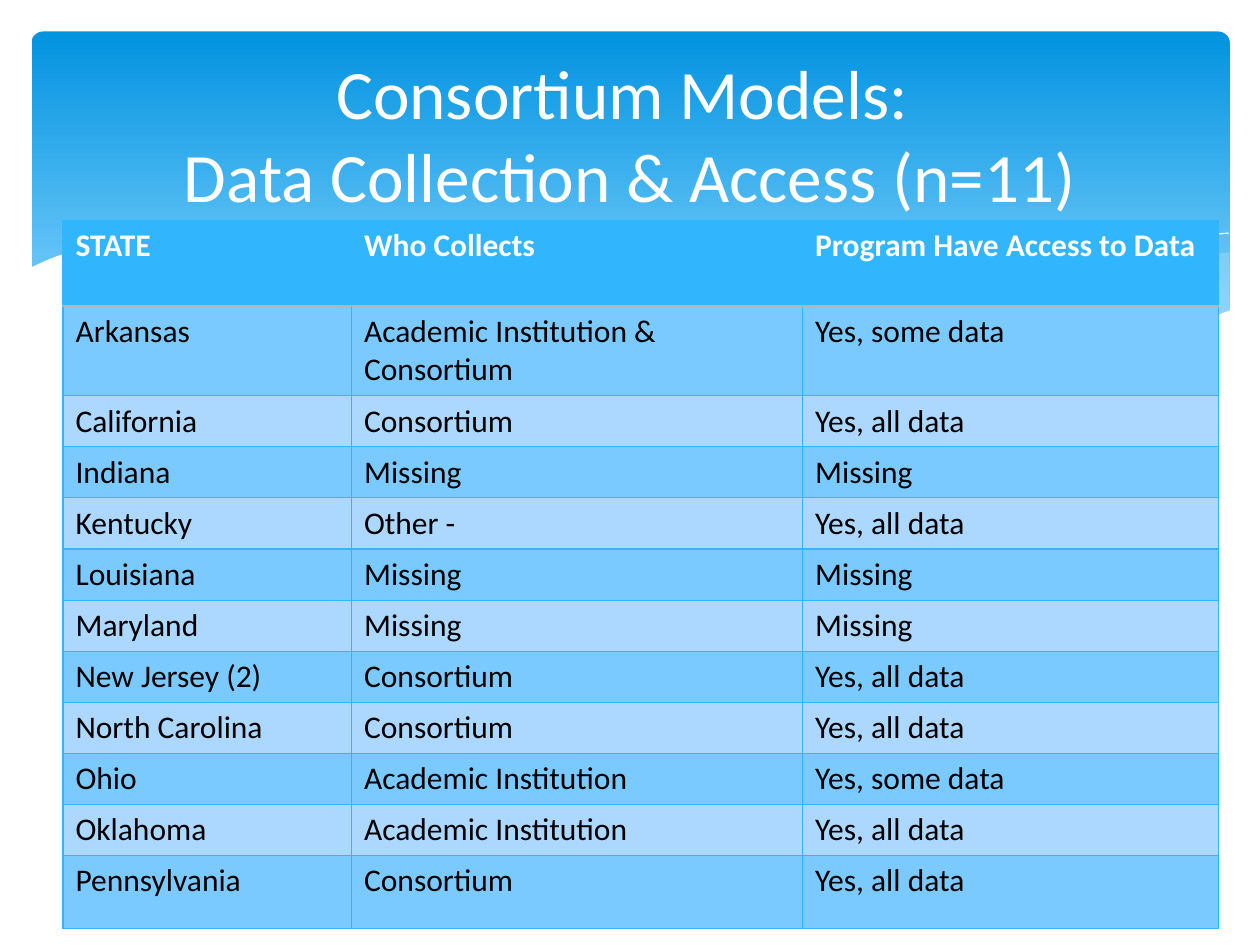
from dataclasses import dataclass
from lxml.etree import SubElement
from pptx import Presentation
from pptx.dml.color import RGBColor as Color
from pptx.enum.shapes import MSO_SHAPE as Preset
from pptx.enum.text import MSO_ANCHOR as Anchor, PP_ALIGN as Align
from pptx.oxml.ns import qn
from pptx.util import Inches, Pt


@dataclass(frozen=True)
class Theme:
    font: str = "Calibri"
    title_size: float = 39.6
    table_size: float = 18
    white: str = "FFFFFF"
    black: str = "000000"
    banner_top: str = "0293E0"
    banner_bottom: str = "83D3FE"
    wave: str = "C6E7FC"
    accent: str = "31B6FD"
    header_rule: str = "B4B4B4"
    bands: tuple = ("7ACAFF", "ACD7FF")


RIGHT_WAVE = [
    (9.76, 2), (9.48, 2.04), (9.21, 2.1), (8.91, 2.16), (8.61, 2.23), (8.05, 2.37),
    (7.53, 2.48), (7.06, 2.57), (6.61, 2.65), (6.91, 2.69), (7.19, 2.72), (7.45, 2.75),
    (7.81, 2.77), (8.14, 2.78), (8.54, 2.76), (8.81, 2.73), (9.05, 2.69), (9.28, 2.63),
    (9.49, 2.57), (9.76, 2.47),
]
MIDDLE_WAVE = [
    (8.93, 2.73), (8.66, 2.69), (8.07, 2.6), (7.41, 2.47), (6.68, 2.31), (6.29, 2.22),
    (5.84, 2.11), (5.41, 2.03), (5.02, 1.96), (4.65, 1.91), (4.2, 1.87), (3.8, 1.85),
    (3.44, 1.86), (3.13, 1.88), (2.86, 1.91), (3.23, 1.96), (3.62, 2.03), (4.04, 2.11),
    (4.49, 2.22), (5.3, 2.4), (6.01, 2.55), (6.5, 2.64), (6.95, 2.7), (7.36, 2.75),
    (7.73, 2.77), (8.07, 2.78), (8.38, 2.78), (8.67, 2.76),
]
LONG_CURVE = [
    (3.09, 1.95), (3.28, 1.92), (3.53, 1.89), (3.87, 1.87), (4.16, 1.87), (4.5, 1.88),
    (4.89, 1.9), (5.33, 1.94), (5.82, 2), (6.36, 2.08), (6.95, 2.19), (7.6, 2.33),
    (8.31, 2.51), (9.07, 2.72),
]
SHORT_CURVE = [
    (6.13, 2.57), (6.53, 2.46), (6.95, 2.35), (7.48, 2.23), (8.06, 2.1), (8.66, 1.99),
    (8.95, 1.94), (9.24, 1.9), (9.51, 1.87), (9.75, 1.85),
]
WHITE_WAVE = [
    (9.77, 2.46), (9.5, 2.56), (9.2, 2.65), (8.87, 2.71), (8.5, 2.75), (8.09, 2.77),
    (7.61, 2.75), (7.08, 2.7), (6.48, 2.62), (5.79, 2.5), (5.03, 2.33), (4.47, 2.2),
    (3.91, 2.07), (3.4, 1.97), (2.92, 1.9), (2.5, 1.86), (2.11, 1.84), (1.77, 1.84),
    (1.46, 1.85), (1.19, 1.87), (0.95, 1.91), (0.76, 1.95), (0.59, 1.99), (0.46, 2.03),
    (0.36, 2.07), (0.23, 2.13), (0.23, 3.29), (9.77, 3.29),
]
COLUMN_WIDTHS = [2.29, 3.58, 3.3]
ROW_HEIGHTS = [0.68, 0.68] + [0.39] * 9 + [0.58]
ROWS = [
    ("STATE", "Who Collects", "Program Have Access to Data"),
    ("Arkansas", "Academic Institution & Consortium", "Yes, some data"),
    ("California", "Consortium", "Yes, all data"),
    ("Indiana", "Missing", "Missing"),
    ("Kentucky", "Other -", "Yes, all data"),
    ("Louisiana", "Missing", "Missing"),
    ("Maryland", "Missing", "Missing"),
    ("New Jersey (2)", "Consortium", "Yes, all data"),
    ("North Carolina", "Consortium", "Yes, all data"),
    ("Ohio", "Academic Institution", "Yes, some data"),
    ("Oklahoma", "Academic Institution", "Yes, all data"),
    ("Pennsylvania", "Consortium", "Yes, all data"),
]


class SlideBuilder:
    def __init__(self, slide, theme):
        self.slide = slide
        self.theme = theme

    def banner(self, left, top, width, height):
        shape = self.slide.shapes.add_shape(
            Preset.ROUNDED_RECTANGLE, Inches(left), Inches(top), Inches(width), Inches(height))
        shape.adjustments[0] = 0.034
        shape.shadow.inherit = False
        shape.line.fill.background()
        shape.fill.gradient()
        shape.fill.gradient_angle = 270
        colors = (self.theme.banner_top, self.theme.banner_bottom)
        for stop, color, position in zip(shape.fill.gradient_stops, colors, (0, 0.9)):
            stop.color.rgb = Color.from_string(color)
            stop.position = position

    def outline(self, points, closed):
        start, *rest = [(Inches(x), Inches(y)) for x, y in points]
        builder = self.slide.shapes.build_freeform(*start)
        builder.add_line_segments(rest, close=closed)
        shape = builder.convert_to_shape()
        shape.shadow.inherit = False
        return shape

    def wave(self, points, color, opacity=100):
        shape = self.outline(points, True)
        shape.line.fill.background()
        shape.fill.solid()
        shape.fill.fore_color.rgb = Color.from_string(color)
        if opacity < 100:
            color_element = shape.fill._xPr.find(qn("a:solidFill"))[0]
            SubElement(color_element, qn("a:alpha"), val=str(opacity * 1000))

    def curve(self, points):
        shape = self.outline(points, False)
        shape.fill.background()
        shape.line.color.rgb = Color.from_string(self.theme.white)
        shape.line.width = Pt(0)

    def run(self, paragraph, text, size, color, bold=False):
        run = paragraph.add_run()
        run.text = text
        run.font.name = self.theme.font
        run.font.size = Pt(size)
        run.font.bold = bold
        run.font.color.rgb = Color.from_string(color)

    def title(self, lines, left, top, width, height):
        box = self.slide.shapes.add_textbox(
            Inches(left), Inches(top), Inches(width), Inches(height))
        frame = box.text_frame
        frame.word_wrap = True
        frame.vertical_anchor = Anchor.MIDDLE
        paragraph = frame.paragraphs[0]
        paragraph.alignment = Align.CENTER
        for index, line in enumerate(lines):
            if index:
                paragraph.add_line_break()
            self.run(paragraph, line, self.theme.title_size, self.theme.white)

    def borders(self, cell, rules):
        properties = cell._tc.get_or_add_tcPr()
        for side, (color, width) in rules.items():
            line = SubElement(properties, qn(f"a:ln{side}"), w=str(Pt(width)))
            fill = SubElement(line, qn("a:solidFill"))
            SubElement(fill, qn("a:srgbClr"), val=color)

    def table(self, rows, widths, heights, left, top):
        theme = self.theme
        table = self.slide.shapes.add_table(
            len(rows), len(widths), Inches(left), Inches(top),
            Inches(sum(widths)), Inches(sum(heights))).table
        for column, width in zip(table.columns, widths):
            column.width = Inches(width)
        for row, height in zip(table.rows, heights):
            row.height = Inches(height)
        thin, thick = (theme.accent, 0.75), (theme.header_rule, 1.25)
        for row_index, texts in enumerate(rows):
            header = row_index == 0
            fill = theme.accent if header else theme.bands[(row_index - 1) % 2]
            rules = dict.fromkeys("LRTB", thin)
            if header:
                rules["B"] = thick
            elif row_index == 1:
                rules["T"] = thick
            for column_index, text in enumerate(texts):
                cell = table.cell(row_index, column_index)
                self.borders(cell, rules)
                cell.fill.solid()
                cell.fill.fore_color.rgb = Color.from_string(fill)
                self.run(cell.text_frame.paragraphs[0], text, theme.table_size,
                         theme.white if header else theme.black, header)


def main():
    presentation = Presentation()
    presentation.slide_width, presentation.slide_height = Inches(10), Inches(7.5)
    theme = Theme()
    builder = SlideBuilder(presentation.slides.add_slide(presentation.slide_layouts[6]), theme)
    builder.banner(0.25, 0.25, 9.51, 2.7)
    builder.wave(RIGHT_WAVE, theme.wave, 29)
    builder.wave(MIDDLE_WAVE, theme.wave, 40)
    builder.curve(LONG_CURVE)
    builder.curve(SHORT_CURVE)
    builder.wave(WHITE_WAVE, theme.white)
    builder.table(ROWS, COLUMN_WIDTHS, ROW_HEIGHTS, 0.5, 1.75)
    builder.title(["Consortium Models: ", "Data Collection & Access (n=11)"], 0.5, 0.37, 9, 1.37)
    presentation.save("out.pptx")


if __name__ == "__main__":
    main()
